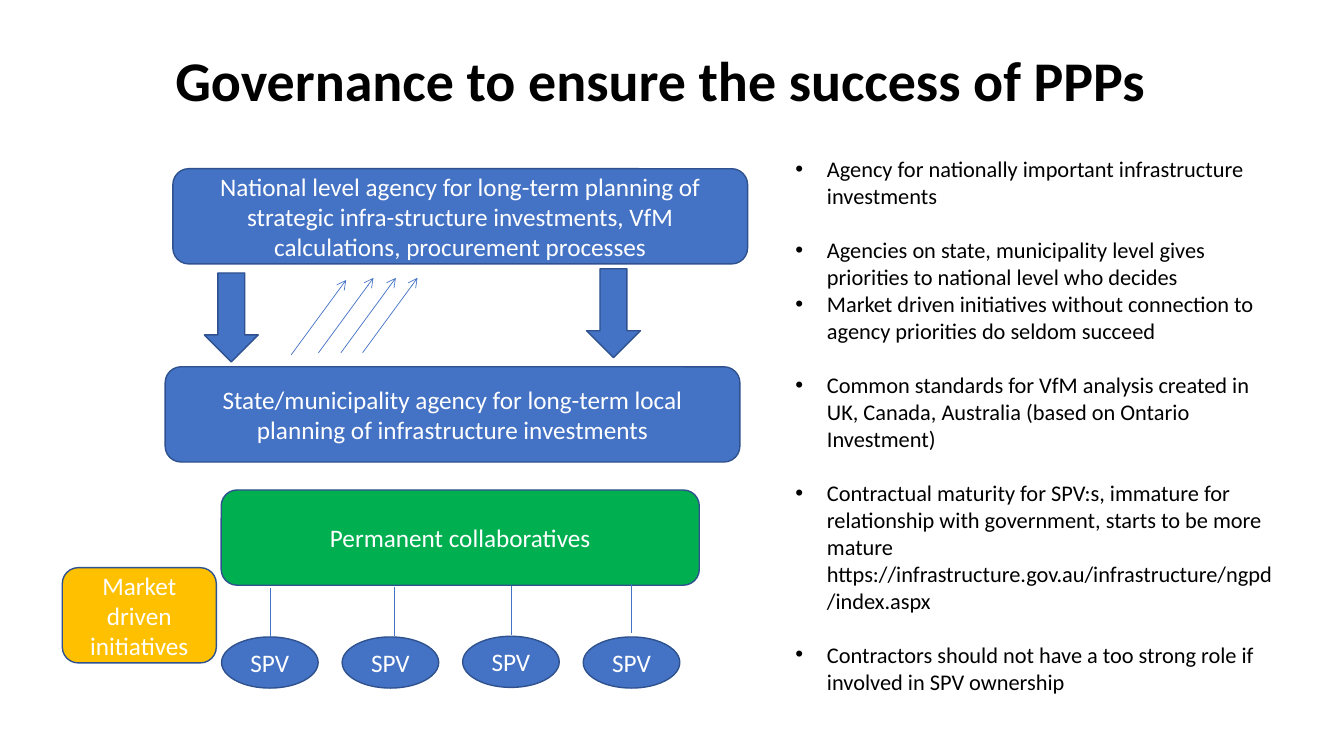
"""Build a slide on governance of public-private partnerships."""
from lxml.etree import SubElement
from pptx import Presentation
from pptx.dml.color import RGBColor
from pptx.enum.shapes import MSO_CONNECTOR, MSO_SHAPE as SHAPE
from pptx.enum.text import MSO_ANCHOR as ANCHOR, MSO_AUTO_SIZE as FIT, PP_ALIGN as ALIGN
from pptx.oxml.ns import qn
from pptx.util import Pt

BLUE = RGBColor(0x44, 0x72, 0xC4)
NAVY = RGBColor(0x2F, 0x52, 0x8F)
GREEN = RGBColor(0x00, 0xB0, 0x50)
AMBER = RGBColor(0xFF, 0xC0, 0x00)
WHITE = RGBColor(0xFF, 0xFF, 0xFF)
BLACK = RGBColor(0x00, 0x00, 0x00)
FONT = "Calibri"


def add_block(kind, x, y, w, h, fill, text=""):
    sp = s.shapes.add_shape(kind, Pt(x), Pt(y), Pt(w), Pt(h))
    sp.shadow.inherit = False
    sp.fill.solid()
    sp.fill.fore_color.rgb = fill
    sp.line.color.rgb = NAVY
    sp.line.width = Pt(1)
    if text:
        sp.text_frame.vertical_anchor = ANCHOR.MIDDLE
        p = sp.text_frame.paragraphs[0]
        p.alignment = ALIGN.CENTER
        r = p.add_run()
        r.text = text
        r.font.name, r.font.size = FONT, Pt(18)
        r.font.color.rgb = WHITE


def add_line(x1, y1, x2, y2, arrow=False):
    c = s.shapes.add_connector(MSO_CONNECTOR.STRAIGHT, Pt(x1), Pt(y1), Pt(x2), Pt(y2))
    c.line.color.rgb = BLUE
    c.line.width = Pt(0.5)
    if arrow:
        SubElement(c.line._get_or_add_ln(), qn("a:tailEnd"), type="arrow")
    SubElement(c._element.spPr, qn("a:effectLst"))


prs = Presentation()
prs.slide_width, prs.slide_height = Pt(960), Pt(540)
s = prs.slides.add_slide(prs.slide_layouts[1])

title = s.shapes.title
title.left, title.top, title.width, title.height = Pt(118), Pt(34.5), Pt(796), Pt(62)
tf = title.text_frame
tf.auto_size = FIT.NONE
tf.vertical_anchor = ANCHOR.TOP
p = tf.paragraphs[0]
p.alignment = ALIGN.LEFT
p.line_spacing = 0.9
r = p.add_run()
r.text = "Governance to ensure the success of PPPs"
r.font.name, r.font.size, r.font.bold = FONT, Pt(40), True
r.font.color.rgb = BLACK

POINTS = [
    ("Agency for nationally important infrastructure investments", 0),
    ("Agencies on state, municipality level gives priorities to national level who decides", 19.5),
    ("Market driven initiatives without connection to agency priorities do seldom succeed", 0),
    ("Common standards for VfM analysis created in UK, Canada, Australia "
     "(based on Ontario Investment)", 19.5),
    ("Contractual maturity for SPV:s, immature for relationship with government, starts to be "
     "more mature https://infrastructure.gov.au/infrastructure/ngpd/index.aspx", 19.5),
    ("Contractors should not have a too strong role if involved in SPV ownership", 19.5),
]
body = s.placeholders[1]
body.left, body.top, body.width, body.height = Pt(561), Pt(107.5), Pt(355), Pt(415)
tf = body.text_frame
tf.auto_size = FIT.NONE
tf.vertical_anchor = ANCHOR.TOP
for i, (text, gap) in enumerate(POINTS):
    p = tf.add_paragraph() if i else tf.paragraphs[0]
    p.space_before = Pt(gap)
    pPr = p._p.get_or_add_pPr()
    pPr.set("marL", str(Pt(22.5)))
    pPr.set("indent", str(-Pt(22.5)))
    SubElement(pPr, qn("a:buFont"), typeface="Arial")
    SubElement(pPr, qn("a:buChar"), char="•")
    r = p.add_run()
    r.text = text
    r.font.name, r.font.size = FONT, Pt(16)
    r.font.color.rgb = BLACK

BLOCKS = [
    (123.5, 120.5, 410.5, BLUE, "National level agency for long-term planning of strategic "
     "infra-structure investments, VfM calculations, procurement processes"),
    (118, 262, 410.5, BLUE,
     "State/municipality agency for long-term local planning of infrastructure investments"),
    (44.5, 405.5, 110, AMBER, "Market driven initiatives"),
    (158, 350, 341.5, GREEN, "Permanent collaboratives"),
]
for x, y, w, fill, text in BLOCKS:
    add_block(SHAPE.ROUNDED_RECTANGLE, x, y, w, 68, fill, text)

for x, y in [(146, 195), (419, 192)]:
    add_block(SHAPE.DOWN_ARROW, x, y, 38.5, 63.5, BLUE)

for x, y in [(208, 253.5), (227.5, 252), (243.5, 252), (259, 252)]:
    add_line(x, y, x + 39.25, y - 53.5, arrow=True)

SPV_PITCH = 86.1
for i, (x, y, top) in enumerate([(193, 420, 455), (282, 419, 455),
                                 (365, 418.5, 454.5), (451, 417, 455)]):
    add_block(SHAPE.OVAL, 158.3 + i * SPV_PITCH, top, 69, 36.5, BLUE, "SPV")
    add_line(x, y, x, y + 35.25)

prs.save("out.pptx")
